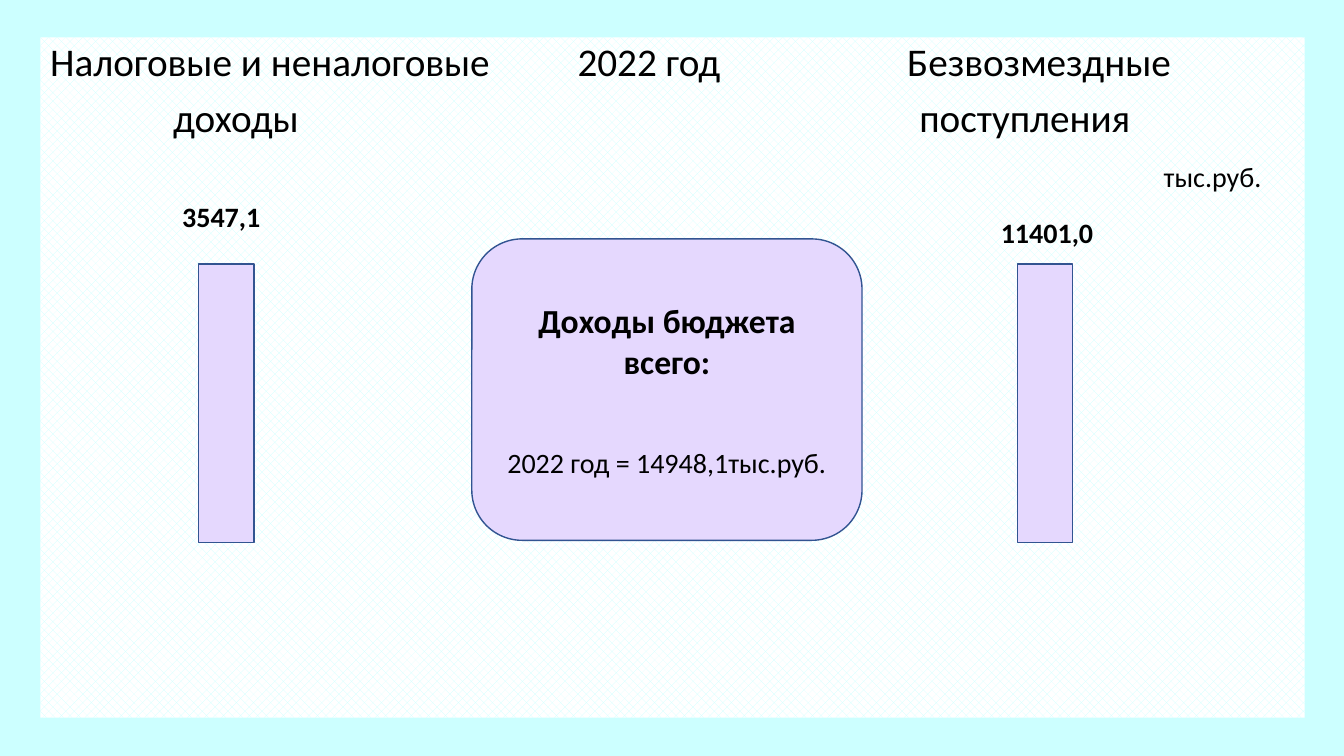
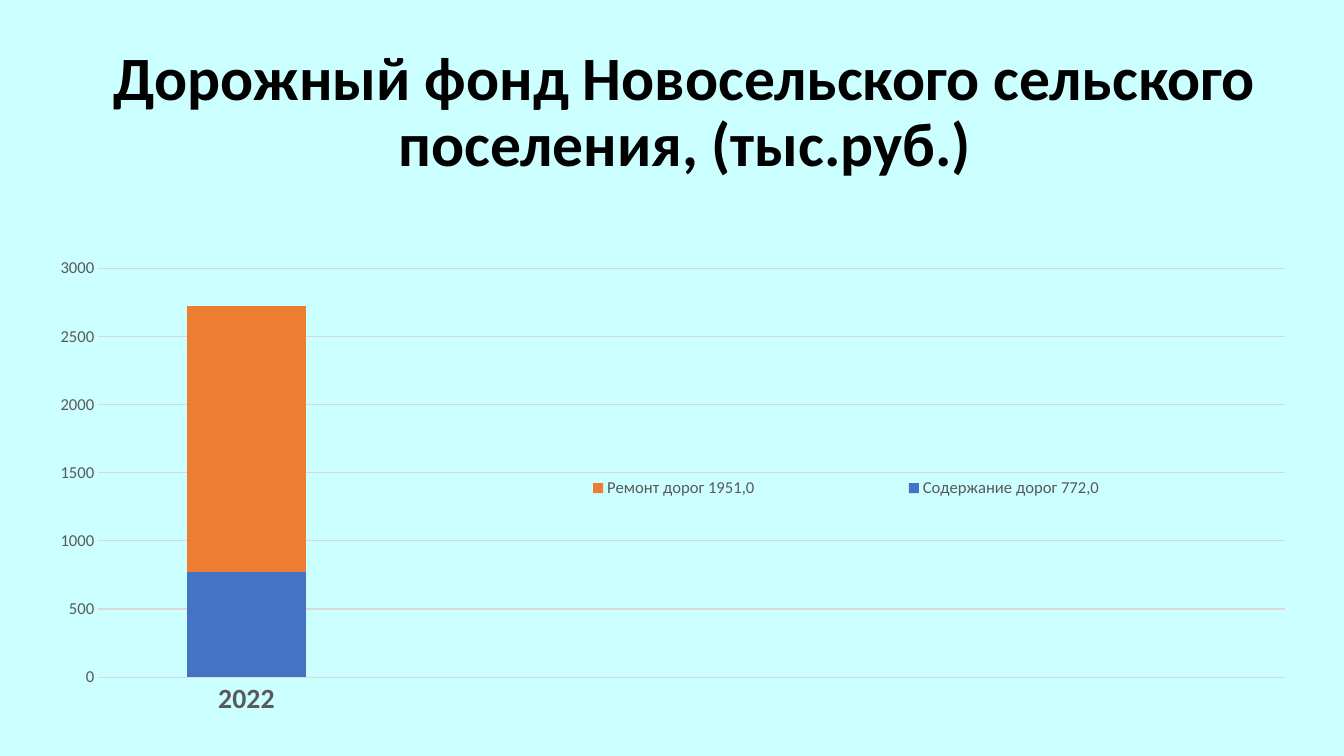
"""Build two slides on the income and the road fund of a settlement budget."""
from lxml import etree
from pptx import Presentation, util as u
from pptx.chart.data import CategoryChartData
from pptx.dml.color import RGBColor
from pptx.enum import chart as ch, dml, shapes, text
from pptx.oxml import ns

FONT = "Calibri"
BLACK, WHITE, GREY, GRID = "000000", "FFFFFF", "595959", "D9D9D9"
CYAN, LILAC, NAVY = "CCFFFF", "E5D8FE", "325491"
CENTER, RIGHT = text.PP_ALIGN.CENTER, text.PP_ALIGN.RIGHT
TITLE_ONLY, BLANK = 5, 6

HEADING_ROWS = [
    [("Налоговые и неналоговые", 0), ("2022 год", 5.23), ("Безвозмездные", 8.5)],
    [("доходы", 1.22), ("поступления", 8.62)],
]
INCOME_BARS = [(1.97, "3547,1", (1.44, 1.93, 1.51, 0.44)),
               (10.09, "11401,0", (9.41, 2.08, 1.95, 0.44))]
BAR_TOP, BAR_WIDTH, BAR_HEIGHT = 2.62, 0.55, 2.76
UNIT = "тыс.руб."
TOTAL = [("Доходы бюджета всего:", 24, True, 0),
         ("2022 год = 14948,1тыс.руб.", 20, False, 46)]

ROAD_TITLE = "Дорожный фонд Новосельского сельского поселения, (тыс.руб.)"
ROAD_YEARS = ["2022", "", "", ""]
ROAD_SERIES = [("Содержание дорог 772,0", 770, "4472C4"),
               ("Ремонт дорог 1951,0", 1950, "ED7D31")]
PLOT_LAYOUT = (0.02, 0.13, 0.96, 0.8)
LEGEND_LAYOUT = (0.3, 0.51, 0.65, 0.1)


def rgb(value):
    """Turn a hex string into a colour."""
    return RGBColor.from_string(value)


def box(lengths):
    """Turn left, top, width and height into lengths."""
    return [u.Inches(length) for length in lengths]


def paint(fill, color):
    """Give a fill one solid colour."""
    fill.solid()
    fill.fore_color.rgb = rgb(color)


def style(font, size, bold=False, color=BLACK):
    """Format a font."""
    font.name, font.size, font.bold = FONT, u.Pt(size), bold
    font.color.rgb = rgb(color)


def write(paragraph, words, size, bold=False, align=None):
    """Add one formatted run to a paragraph."""
    run = paragraph.add_run()
    run.text = words
    style(run.font, size, bold)
    paragraph.alignment = align


def add_label(slide, place, words, size, bold, align):
    """Add a one-line text box."""
    frame = slide.shapes.add_textbox(*box(place)).text_frame
    frame.word_wrap = True
    frame.vertical_anchor = text.MSO_ANCHOR.MIDDLE
    write(frame.paragraphs[0], words, size, bold, align)


def add_block(slide, kind, place):
    """Add a lilac shape with a thin outline."""
    block = slide.shapes.add_shape(kind, *box(place))
    block.shadow.inherit = False
    paint(block.fill, LILAC)
    block.line.color.rgb = rgb(NAVY)
    block.line.width = u.Pt(1)
    return block


def add_panel(slide):
    """Add the woven panel with the column headings set on tab stops."""
    panel = slide.shapes.add_shape(shapes.MSO_SHAPE.RECTANGLE, *box((0.4, 0.37, 12.54, 6.75)))
    panel.shadow.inherit = False
    panel.line.fill.background()
    panel.fill.patterned()
    panel.fill.pattern = dml.MSO_PATTERN.WEAVE
    panel.fill.fore_color.rgb = rgb(CYAN)
    panel.fill.back_color.rgb = rgb(WHITE)
    frame = panel.text_frame
    frame.vertical_anchor = text.MSO_ANCHOR.TOP
    for index, row in enumerate(HEADING_ROWS):
        paragraph = frame.add_paragraph() if index else frame.paragraphs[0]
        paragraph.line_spacing, paragraph.space_before = 0.9, u.Pt(10)
        for words, stop in row:
            write(paragraph, ("\t" if stop else "") + words, 28, align=text.PP_ALIGN.LEFT)
        tabs = etree.SubElement(paragraph._p.get_or_add_pPr(), ns.qn("a:tabLst"))
        for _, stop in row:
            if stop:
                etree.SubElement(tabs, ns.qn("a:tab"), pos=str(u.Inches(stop)), algn="l")


def build_income(prs):
    """Build the slide on total income."""
    slide = prs.slides.add_slide(prs.slide_layouts[BLANK])
    add_panel(slide)
    for left, amount, place in INCOME_BARS:
        add_block(slide, shapes.MSO_SHAPE.RECTANGLE, (left, BAR_TOP, BAR_WIDTH, BAR_HEIGHT))
        add_label(slide, place, amount, 20, True, CENTER)
    add_label(slide, (11.11, 1.53, 1.5, 0.44), UNIT, 20, False, RIGHT)
    total = add_block(slide, shapes.MSO_SHAPE.ROUNDED_RECTANGLE, (4.68, 2.37, 3.87, 2.99))
    frame = total.text_frame
    frame.word_wrap = True
    frame.vertical_anchor = text.MSO_ANCHOR.MIDDLE
    for index, (words, size, bold, gap) in enumerate(TOTAL):
        paragraph = frame.add_paragraph() if index else frame.paragraphs[0]
        paragraph.space_before = u.Pt(gap)
        write(paragraph, words, size, bold, CENTER)


def set_layout(part, index, place, inner=False):
    """Fix the place of a chart part as shares of the chart."""
    for old in part.findall(ns.qn("c:layout")):
        part.remove(old)
    layout = etree.Element(ns.qn("c:layout"))
    manual = etree.SubElement(layout, ns.qn("c:manualLayout"))
    settings = [("layoutTarget", "inner")] if inner else []
    settings += [("xMode", "edge"), ("yMode", "edge"), *zip("xywh", place)]
    for tag, value in settings:
        etree.SubElement(manual, ns.qn(f"c:{tag}"), val=str(value))
    part.insert(index, layout)


def add_road_chart(slide):
    """Add the stacked columns of road spending."""
    data = CategoryChartData()
    data.categories = ROAD_YEARS
    for name, value, _ in ROAD_SERIES:
        data.add_series(name, [value] + [None] * (len(ROAD_YEARS) - 1))
    chart = slide.shapes.add_chart(ch.XL_CHART_TYPE.COLUMN_STACKED,
                                   *box((0.6, 2, 12.39, 5.1)), data).chart
    chart.has_title = False
    style(chart.font, 10)
    plot = chart.plots[0]
    plot.gap_width, plot.overlap, plot.vary_by_categories = 150, 100, False
    for series, (_, _, color) in zip(plot.series, ROAD_SERIES):
        paint(series.format.fill, color)

    years, amounts = chart.category_axis, chart.value_axis
    for axis, size, bold in ((years, 20, True), (amounts, 12, False)):
        axis.major_tick_mark = axis.minor_tick_mark = ch.XL_TICK_MARK.NONE
        style(axis.tick_labels.font, size, bold, GREY)
    amounts.minimum_scale, amounts.maximum_scale, amounts.major_unit = 0, 3000, 500
    amounts.format.line.fill.background()
    for line in (years.format.line, amounts.major_gridlines.format.line):
        line.color.rgb = rgb(GRID)
        line.width = u.Pt(0.75)

    chart.has_legend = True
    chart.legend.position = ch.XL_LEGEND_POSITION.RIGHT
    chart.legend.include_in_layout = False
    style(chart.legend.font, 12, False, GREY)
    set_layout(chart.element.xpath("c:chart/c:plotArea")[0], 0, PLOT_LAYOUT, True)
    set_layout(chart.element.xpath("c:chart/c:legend")[0], 1, LEGEND_LAYOUT)


def build_roads(prs):
    """Build the slide on the road fund."""
    slide = prs.slides.add_slide(prs.slide_layouts[TITLE_ONLY])
    title = slide.shapes.title
    title.left, title.top, title.width, title.height = box((0.92, 0.4, 11.75, 1.45))
    paint(title.fill, CYAN)
    frame = title.text_frame
    frame.word_wrap = True
    frame.vertical_anchor = text.MSO_ANCHOR.MIDDLE
    frame.paragraphs[0].line_spacing = 0.9
    write(frame.paragraphs[0], ROAD_TITLE, 44, True, CENTER)
    add_road_chart(slide)


def main():
    """Build and save the presentation."""
    prs = Presentation()
    prs.slide_width, prs.slide_height = u.Inches(13.33), u.Inches(7.5)
    paint(prs.slide_master.background.fill, CYAN)
    build_income(prs)
    build_roads(prs)
    prs.save("out.pptx")


if __name__ == "__main__":
    main()
